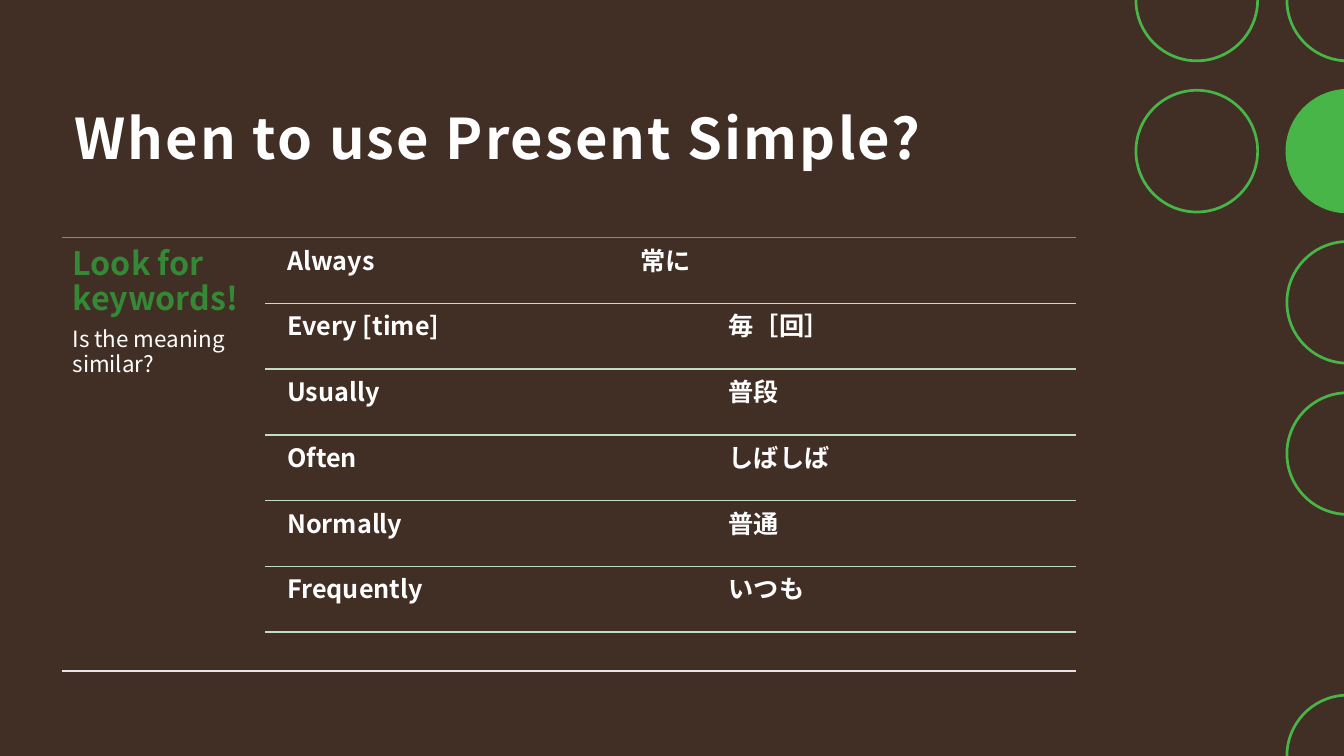
import math

from lxml import etree
from pptx import Presentation
from pptx import util as u
from pptx.dml.color import RGBColor
from pptx.enum import shapes, text
from pptx.oxml.ns import qn

BROWN, GREEN, DARK_GREEN = "412E24", "47B547", "358835"
WHITE, PALE_GREEN, PALE_GREY = "FFFFFF", "C1DEC1", "E8E2E8"
FONT = "Noto Sans CJK JP"


def rgb(value):
    return RGBColor.from_string(value)


def arc(cx, cy, r, start, end):
    """Bezier points from one angle to another: the start, then threes of control, control, end."""
    steps = math.ceil((end - start) / 90)
    turn = math.radians(end - start) / steps
    k = 4 / 3 * math.tan(turn / 4)
    pts = [(math.cos(math.radians(start)), math.sin(math.radians(start)))]
    for i in range(steps):
        a = math.radians(start) + i * turn
        b = a + turn
        pts += [(math.cos(a) - k * math.sin(a), math.sin(a) + k * math.cos(a)),
                (math.cos(b) + k * math.sin(b), math.sin(b) - k * math.cos(b)),
                (math.cos(b), math.sin(b))]
    return [(round(cx + r * x), round(cy + r * y)) for x, y in pts]


def bend(lines):
    """Turn each three straight segments into one Bezier curve."""
    for first, second, third in zip(lines[::3], lines[1::3], lines[2::3]):
        curve = etree.Element(qn("a:cubicBezTo"))
        first.addprevious(curve)
        for ln in (first, second, third):
            curve.append(ln[0])
            ln.getparent().remove(ln)


class Deck:
    """Style and current slide; lengths are hundredths of its width and height."""

    def __init__(self):
        self.prs = Presentation()
        self.prs.slide_width, self.prs.slide_height = u.Inches(13.333), u.Inches(7.5)
        self.col, self.row = self.prs.slide_width / 100, self.prs.slide_height / 100
        self.s = self.prs.slides.add_slide(self.prs.slide_layouts[1])
        self.s.background.fill.solid()
        self.s.background.fill.fore_color.rgb = rgb(BROWN)

    def box(self, x, y, w, h):
        return [round(n) for n in (x * self.col, y * self.row, w * self.col, h * self.row)]

    def frame(self, sp, box, inset):
        sp.left, sp.top, sp.width, sp.height = self.box(*box)
        tf = sp.text_frame
        tf.word_wrap, tf.auto_size = True, text.MSO_AUTO_SIZE.NONE
        tf.vertical_anchor = text.MSO_ANCHOR.TOP
        tf.margin_left = tf.margin_right = tf.margin_top = tf.margin_bottom = u.Inches(inset)
        return tf

    def style(self, p, size, color=WHITE, bold=True, spacing=0.9, after=0):
        p.alignment, p.line_spacing = text.PP_ALIGN.LEFT, spacing
        p.space_before, p.space_after = u.Pt(0), u.Pt(after)
        p.font.name, p.font.size, p.font.bold = FONT, u.Pt(size), bold
        p.font.color.rgb = rgb(color)
        for r in p.runs:
            etree.SubElement(r._r.get_or_add_rPr(), qn("a:ea"), typeface=FONT)

    def title(self, words, *box):
        tf = self.frame(self.s.shapes.title, box, 0.12)
        p = tf.paragraphs[0]
        p.text = words
        self.style(p, 40, spacing=1.1)
        for r in p.runs:
            r._r.get_or_add_rPr().set("spc", "150")

    def body(self, lines, *box):
        """Fill the body placeholder from (words, size, colour, bold) lines."""
        tf = self.frame(self.s.placeholders[1], box, 0.1)
        for i, (words, *look) in enumerate(lines):
            p = tf.paragraphs[0] if i == 0 else tf.add_paragraph()
            p.text = words
            self.style(p, *look, after=8)
            pPr = p._p.get_or_add_pPr()
            pPr.set("marL", "0")
            pPr.set("indent", "0")
            pPr.insert_element_before(etree.Element(qn("a:buNone")), "a:tabLst", "a:defRPr")

    def entry(self, word, meaning, stop, *box):
        """Put a word and its meaning on one line, the meaning at a tab stop in inches."""
        tf = self.frame(self.s.shapes.add_textbox(0, 0, 0, 0), box, 0.07)
        p = tf.paragraphs[0]
        p.text = f"{word}\t{meaning}"
        self.style(p, 18)
        tabs = etree.Element(qn("a:tabLst"))
        etree.SubElement(tabs, qn("a:tab"), pos=str(u.Inches(stop)), algn="l")
        p._p.get_or_add_pPr().insert_element_before(tabs, "a:defRPr")

    def rule(self, x1, x2, y, color):
        left, top, width, _ = self.box(x1, y, x2 - x1, 0)
        ln = self.s.shapes.add_connector(
            shapes.MSO_CONNECTOR.STRAIGHT, left, top, left + width, top)
        ln.line.color.rgb, ln.line.width = rgb(color), u.Pt(1)
        etree.SubElement(ln._element.spPr, qn("a:effectLst"))

    def circle(self, x, y, filled=False):
        """Draw the part of a disc or ring that lies on the slide."""
        cx, cy = x * self.col, y * self.row
        outer_r, inner_r = 8.23 * self.row, 7.87 * self.row

        def visible(r):
            start, end = 0, 360
            if cx + r > self.prs.slide_width:
                cut = math.degrees(math.asin((cx - self.prs.slide_width) / r))
                start, end = 90 + cut, 270 - cut
            if y == 0:
                end = 180
            if y == 100:
                start = 180
            return arc(cx, cy, r, start, end)

        outer, inner = visible(outer_r), visible(inner_r)[::-1]
        whole = outer[0] == outer[-1]
        fb = self.s.shapes.build_freeform(*outer[0])
        fb.add_line_segments(outer[1:], close=filled or whole)
        if whole and not filled:
            fb.move_to(*inner[0])
            fb.add_line_segments(inner[1:], close=True)
        elif not filled:
            fb.add_line_segments(inner, close=True)
        sp = fb.convert_to_shape()
        lines = list(sp._element.iter(qn("a:lnTo")))
        n = len(outer) - 1
        bend(lines[:n])
        if not filled:
            bend(lines[-n:])
        sp.shadow.inherit = False
        sp.fill.solid()
        sp.fill.fore_color.rgb = rgb(GREEN)
        sp.line.fill.background()


def main():
    left, list_left, right = 4.65, 19.73, 80.08
    top, pitch = 31.45, 8.69
    entries = [("Always", "常に", 3.5), ("Every [time]", "毎［回］", 4.38),
               ("Usually", "普段", 4.38), ("Often", "しばしば", 4.38),
               ("Normally", "普通", 4.38), ("Frequently", "いつも", 4.38)]

    d = Deck()
    d.title("When to use Present Simple?", left, 11.2, right - left, 18.53)
    d.rule(left, right, top, GREEN)
    d.body([("Look for keywords!", 23, DARK_GREEN, True),
            ("Is the meaning similar?", 16, WHITE, False)],
           left, top, list_left - left, 52.5)
    for i, (word, meaning, stop) in enumerate(entries):
        y = top + 0.48 + i * pitch
        d.entry(word, meaning, stop, 20.85, y, right - 20.85, 8.27)
        d.rule(list_left, right, top + (i + 1) * pitch, PALE_GREEN)
    d.rule(left, right, 88.77, PALE_GREY)

    inner, outer = 89.05, 100.28
    d.circle(outer, 20, filled=True)
    for x, y in [(inner, 0), (outer, 0), (outer, 40), (inner, 20), (outer, 60), (outer, 100)]:
        d.circle(x, y)
    d.prs.save("out.pptx")


if __name__ == "__main__":
    main()
